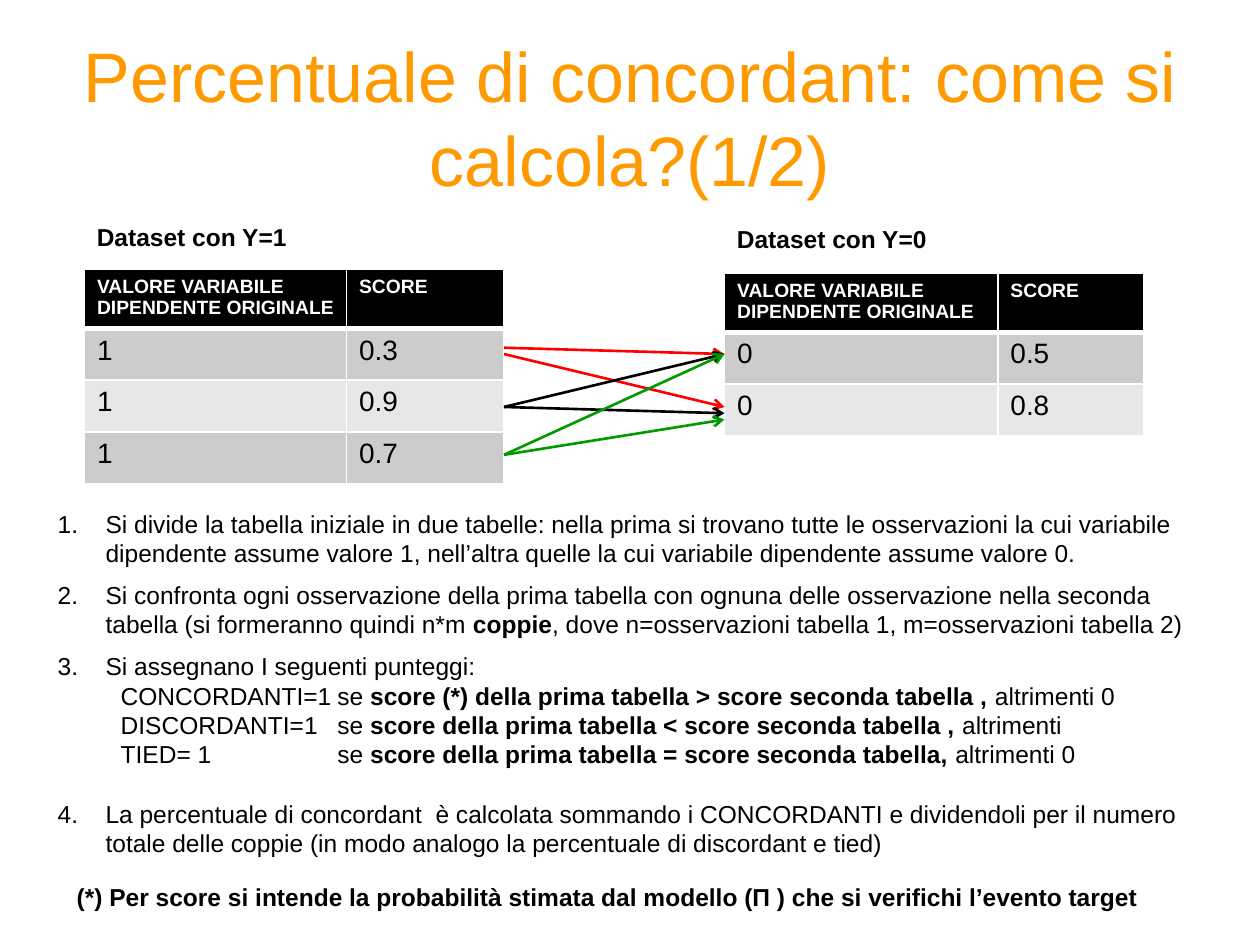
from dataclasses import dataclass

from lxml import etree
from pptx import Presentation
from pptx import util as u
from pptx.dml.color import RGBColor
from pptx.enum import shapes, text
from pptx.oxml.ns import qn

PX = 9144


@dataclass(frozen=True)
class Theme:
    """Colours and type sizes of the slide."""
    font: str = "Arial"
    title: str = "FF9900"
    ink: str = "000000"
    paper: str = "FFFFFF"
    bands: tuple = ("CCCCCC", "E7E7E7")
    red: str = "FF0000"
    green: str = "009900"
    big: int = 40
    cell: int = 16
    body: int = 14
    head: int = 11


T = Theme()


def px(n):
    """Turn px into EMU."""
    return u.Emu(n * PX)


def node(parent, tag, **attrs):
    """Append an XML element with attributes."""
    item = etree.SubElement(parent, qn(tag))
    for key, val in attrs.items():
        item.set(key, str(val))
    return item


def write(par, words, size=T.body, color=T.ink, bold=False, align=None,
          before=0, level=0, left=0, hang=0, num=False):
    """Fill a paragraph; each | switches bold on or off."""
    par.level = level
    par.alignment = align
    par.space_before = u.Pt(before)
    prop = par._p.get_or_add_pPr()
    prop.set("marL", str(px(left)))
    prop.set("indent", str(px(-hang)))
    if num:
        node(prop, "a:buFont", typeface="+mj-lt")
        node(prop, "a:buAutoNum", type="arabicPeriod")
    else:
        node(prop, "a:buNone")
    for i, part in enumerate(words.split("|")):
        run = par.add_run()
        run.text = part
        font = run.font
        font.name, font.size = T.font, u.Pt(size)
        font.bold = bold or i % 2 == 1
        font.color.rgb = RGBColor.from_string(color)


def label(slide, box, words, anchor=text.MSO_ANCHOR.TOP, **style):
    """Add a wrapped text box with one paragraph."""
    frame = slide.shapes.add_textbox(*map(px, box)).text_frame
    frame.word_wrap = True
    frame.vertical_anchor = anchor
    write(frame.paragraphs[0], words, **style)
    return frame


def edge(cell, base):
    """Draw the white borders of a cell."""
    prop = cell._tc.get_or_add_tcPr()
    for side in "LRTB":
        wide = base if side == "B" else 1
        line = node(prop, f"a:ln{side}", w=u.Pt(wide))
        node(node(line, "a:solidFill"), "a:srgbClr", val=T.paper)


def grid(slide, box, cols, head, flag, scores):
    """Add a data set: its caption and its table."""
    x, y, w, h = box
    label(slide, (x, y, 317, 34), f"Dataset con Y={flag}", bold=True)
    rows = [("VALORE VARIABILE DIPENDENTE ORIGINALE", "SCORE")]
    rows += [(flag, score) for score in scores]
    tall = 41
    size = head + tall * len(scores)
    table = slide.shapes.add_table(
        len(rows), 2, px(x), px(y + h - size), px(w), px(size)).table
    for col, wide in zip(table.columns, cols):
        col.width = px(wide)
    for r, row in enumerate(rows):
        table.rows[r].height = px(tall if r else head)
        for c, words in enumerate(row):
            cell = table.cell(r, c)
            edge(cell, 1 if r else 3)
            cell.margin_right = px(3)
            cell.fill.solid()
            fill = T.bands[(r - 1) % 2] if r else T.ink
            cell.fill.fore_color.rgb = RGBColor.from_string(fill)
            style = (dict(size=T.cell) if r
                     else dict(size=T.head, color=T.paper, bold=True))
            write(cell.text_frame.paragraphs[0], words, **style)


def links(slide, box):
    """Join each score on the left with both scores on the right."""
    x, y, w, _ = box
    pairs = [(T.red, 0, 5), (T.red, 5, 47), (T.ink, 47, 5),
             (T.ink, 47, 52), (T.green, 85, 5), (T.green, 85, 57)]
    for color, start, end in pairs:
        wire = slide.shapes.add_connector(
            shapes.MSO_CONNECTOR.STRAIGHT,
            px(x), px(y + start), px(x + w), px(y + end))
        wire.line.width = u.Pt(1.5)
        wire.line.color.rgb = RGBColor.from_string(color)
        node(wire.line._get_or_add_ln(), "a:tailEnd", type="arrow")
        node(wire._element.spPr, "a:effectLst")


def steps(slide, box):
    """Add the numbered steps with the scoring rules."""
    item = dict(left=38, hang=38, num=True)
    rule = dict(left=72, hang=22, level=1)
    lines = [
        ("Si divide la tabella iniziale in due tabelle: nella prima si trovano "
         "tutte le osservazioni la cui variabile dipendente assume valore 1, "
         "nell’altra quelle la cui variabile dipendente assume valore 0.", item),
        ("Si confronta ogni osservazione della prima tabella con ognuna delle "
         "osservazione nella seconda tabella (si formeranno quindi n*m |coppie|"
         ", dove n=osservazioni tabella 1, m=osservazioni tabella 2)",
         dict(item, before=7)),
        ("Si assegnano I seguenti punteggi:", dict(item, before=7)),
        ("CONCORDANTI=1\tse |score (*) della prima tabella > score seconda "
         "tabella , |altrimenti 0", rule),
        ("DISCORDANTI=1\tse| score della prima tabella < score seconda "
         "tabella , |altrimenti", rule),
        ("TIED= 1\t\tse| score della prima tabella = score seconda "
         "tabella, |altrimenti 0", rule),
        ("La percentuale di concordant  è calcolata sommando i CONCORDANTI e "
         "dividendoli per il numero totale delle coppie (in modo analogo la "
         "percentuale di discordant e tied)", dict(item, before=17)),
    ]
    first, *rest = lines
    frame = label(slide, box, first[0], **first[1])
    for words, style in rest:
        write(frame.add_paragraph(), words, **style)


def main():
    """Build and save the slide."""
    deck = Presentation()
    deck.slide_width, deck.slide_height = px(1000), px(750)
    slide = deck.slides.add_slide(deck.slide_layouts[6])
    label(slide, (50, 30, 900, 125),
          "Percentuale di concordant: come si calcola?(1/2)",
          anchor=text.MSO_ANCHOR.MIDDLE, size=T.big, color=T.title,
          align=text.PP_ALIGN.CENTER)
    grid(slide, (67, 171, 333, 209), (208, 125), 43, "1", ("0.3", "0.9", "0.7"))
    grid(slide, (575, 173, 333, 171), (217, 116), 45, "0", ("0.5", "0.8"))
    links(slide, (400, 276, 175, 85))
    steps(slide, (36, 399, 917, 293))
    label(slide, (51, 695, 972, 34),
          "(*) Per score si intende la probabilità stimata dal modello (Π ) "
          "che si verifichi l’evento target", bold=True)
    deck.save("out.pptx")


if __name__ == "__main__":
    main()
